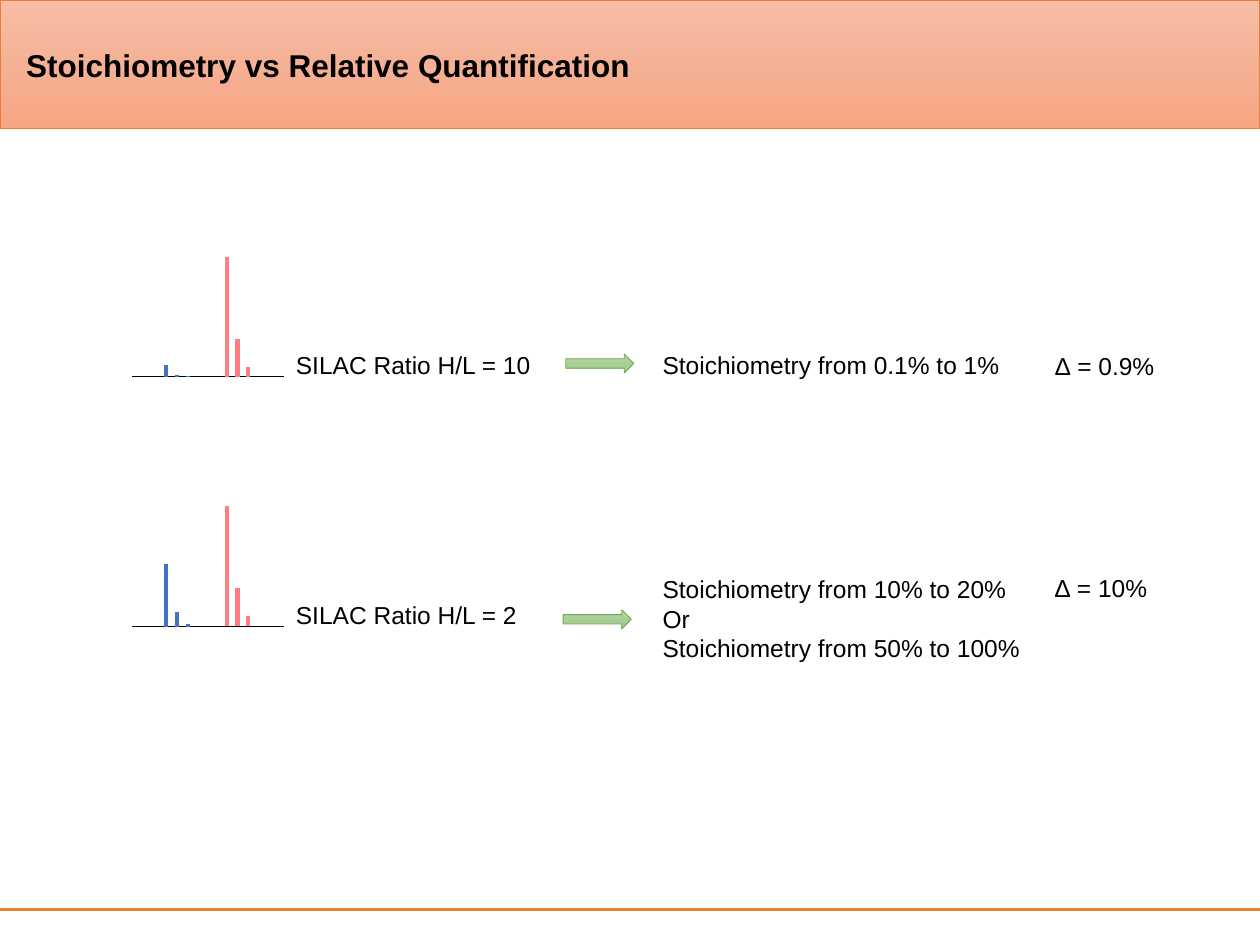
from copy import deepcopy
from pptx import Presentation
from pptx.dml.color import RGBColor
from pptx.enum.shapes import MSO_CONNECTOR, MSO_SHAPE
from pptx.enum.text import MSO_AUTO_SIZE, PP_ALIGN
from pptx.oxml.xmlchemy import OxmlElement
from pptx.util import Inches, Pt

COLS, ROWS = 10, 7.5
COLORS = {
    "orange": "ED7D31", "green": "70AD47", "black": "000000",
    "light": "4472C4", "heavy": "FF7C80",
}
GRADIENTS = {
    "orange": ("F7BDA5", "F5B196", "F8A582"),
    "green": ("B5D5A7", "AACE9A", "9CC987"),
}
PEAK_STEP = 0.085
HEAVY_PEAKS = (0.95, 0.3, 0.08)


def rgb(name):
    return RGBColor.from_string(COLORS[name])


def grid(*cells):
    return [Inches(cell) for cell in cells]


def add_line(s, x1, y1, x2, y2, color, width):
    line = s.shapes.add_connector(MSO_CONNECTOR.STRAIGHT, *grid(x1, y1, x2, y2))
    line.line.color.rgb = rgb(color)
    line.line.width = Pt(width)
    line._element.spPr.append(OxmlElement("a:effectLst"))


def add_gradient_shape(s, kind, box, color):
    sp = s.shapes.add_shape(kind, *grid(*box))
    sp.shadow.inherit = False
    sp.line.color.rgb = rgb(color)
    sp.line.width = Pt(0.5)
    sp.fill.gradient()
    sp.fill.gradient_angle = 270
    stops = sp.fill._fill._gradFill.gsLst
    stops.insert(1, deepcopy(stops[0]))
    for i, (stop, shade) in enumerate(zip(sp.fill.gradient_stops, GRADIENTS[color])):
        stop.position = i / 2
        stop.color.rgb = RGBColor.from_string(shade)


def add_text(s, box, lines, size=14, bold=False, align=PP_ALIGN.LEFT):
    tf = s.shapes.add_textbox(*grid(*box)).text_frame
    tf.word_wrap = True
    tf.auto_size = MSO_AUTO_SIZE.SHAPE_TO_FIT_TEXT
    for i, line in enumerate(lines):
        p = tf.add_paragraph() if i else tf.paragraphs[0]
        p.alignment = align
        r = p.add_run()
        r.text = line
        r.font.name = "Arial"
        r.font.size = Pt(size)
        r.font.bold = bold
        r.font.color.rgb = rgb("black")


def add_peaks(s, col, base, heights, color):
    for i, height in enumerate(heights):
        x = col + i * PEAK_STEP
        add_line(s, x, base - height, x, base, color, 2.5)


def add_spectrum(s, base, light_peaks):
    add_line(s, 1.05, base, 2.25, base, "black", 0.5)
    add_peaks(s, 1.32, base + 0.005, light_peaks, "light")
    add_peaks(s, 1.8, base, HEAVY_PEAKS, "heavy")


def add_frame(s, title):
    add_gradient_shape(s, MSO_SHAPE.RECTANGLE, (0, 0, COLS, 1.02), "orange")
    add_line(s, 0, 7.22, COLS, 7.22, "orange", 1.5)
    add_text(s, (0.11, 0.32, 9.54, 0.4), [title], 18, True)


def add_example(s, base, light_peaks, ratio, arrow, result, delta):
    add_spectrum(s, base, light_peaks)
    add_text(s, (2.25, base - 0.26, 2.21, 0.34), [ratio])
    add_gradient_shape(s, MSO_SHAPE.RIGHT_ARROW, (*arrow, 0.54, 0.15), "green")
    top, lines = result
    add_text(s, (5.16, top, 3.22, 0.34 + 0.235 * (len(lines) - 1)), lines)
    x, y, label = delta
    add_text(s, (x, y, 1.2, 0.34), [label], align=PP_ALIGN.CENTER)


def main():
    prs = Presentation()
    prs.slide_width, prs.slide_height = grid(COLS, ROWS)
    s = prs.slides.add_slide(prs.slide_layouts[6])
    add_frame(s, "Stoichiometry vs Relative Quantification")
    add_example(
        s, 2.99, (0.1, 0.02, 0.01), "SILAC Ratio H/L = 10", (4.49, 2.81),
        (2.73, ["Stoichiometry from 0.1% to 1%"]), (8.17, 2.74, "∆ = 0.9%"),
    )
    add_example(
        s, 4.97, (0.5, 0.12, 0.02), "SILAC Ratio H/L = 2", (4.47, 4.84),
        (4.51, ["Stoichiometry from 10% to 20%", "Or", "Stoichiometry from 50% to 100%"]),
        (8.14, 4.5, "∆ = 10%"),
    )
    prs.save("out.pptx")


main()
